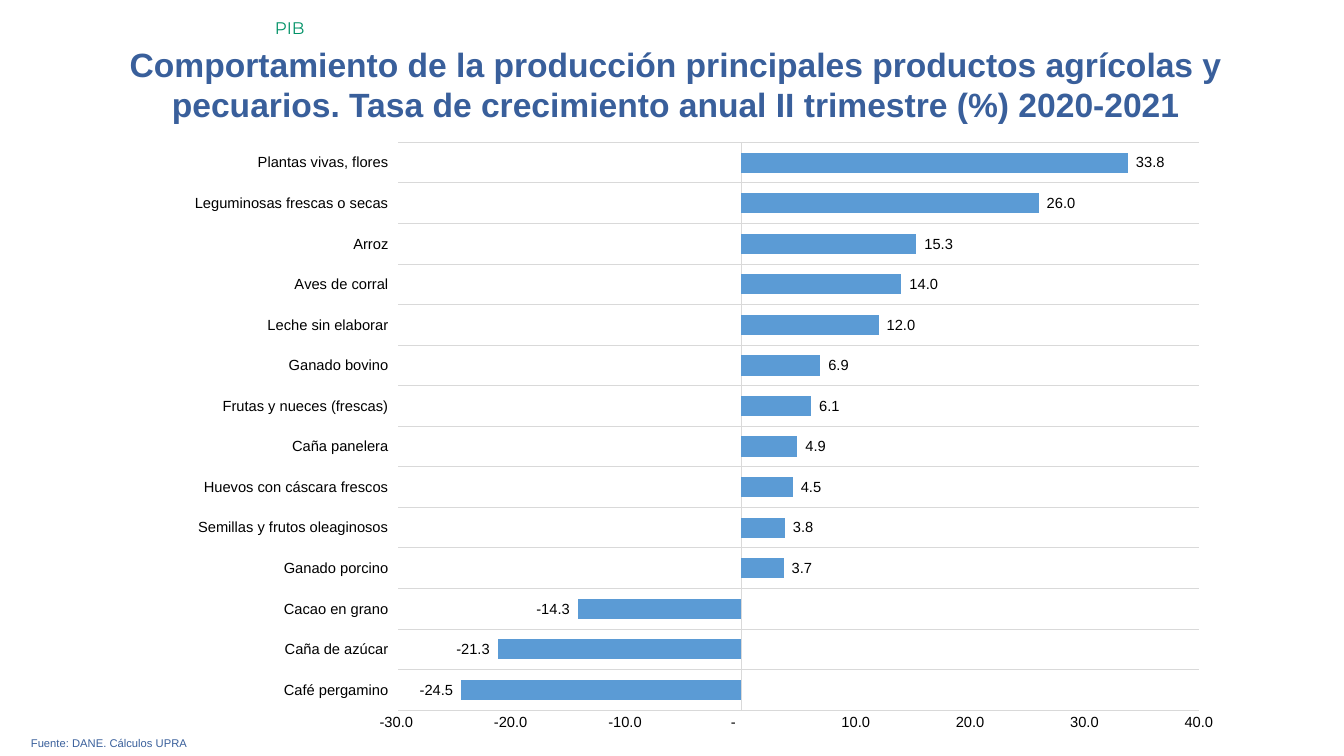
"""Build a slide with a bar chart of annual growth in farm production."""
from lxml import etree
from pptx import Presentation
from pptx.chart.data import CategoryChartData
from pptx.dml.color import RGBColor
from pptx.enum.chart import XL_CHART_TYPE, XL_LABEL_POSITION, XL_TICK_LABEL_POSITION, XL_TICK_MARK
from pptx.enum.text import PP_ALIGN
from pptx.oxml.ns import qn
from pptx.util import Cm, Pt

BAR_CLUSTERED = XL_CHART_TYPE.BAR_CLUSTERED
OUTSIDE_END = XL_LABEL_POSITION.OUTSIDE_END
LOW = XL_TICK_LABEL_POSITION.LOW
NO_TICK = XL_TICK_MARK.NONE
LEFT, CENTER, JUSTIFY = PP_ALIGN.LEFT, PP_ALIGN.CENTER, PP_ALIGN.JUSTIFY

COLORS = {"title": "395F9B", "section": "009267", "bar": "5B9BD5", "grid": "D9D9D9", "text": "000000"}
NUMBER_FORMAT = '_-* #,##0.0_-;\\-* #,##0.0_-;_-* "-"??_-;'
GROWTH = {
    "Café pergamino": -24.5,
    "Caña de azúcar": -21.3,
    "Cacao en grano": -14.3,
    "Ganado porcino": 3.7,
    "Semillas y frutos oleaginosos": 3.8,
    "Huevos con cáscara frescos": 4.5,
    "Caña panelera": 4.9,
    "Frutas y nueces (frescas)": 6.1,
    "Ganado bovino": 6.9,
    "Leche sin elaborar": 12,
    "Aves de corral": 14,
    "Arroz": 15.3,
    "Leguminosas frescas o secas": 26,
    "Plantas vivas, flores": 33.8,
}
TEXTS = [
    ("Comportamiento de la producción principales productos agrícolas y pecuarios. "
     "Tasa de crecimiento anual II trimestre (%) 2020-2021",
     (1.14, 0.97, 31.78, 2.31), 24, "Arial", "title", True, CENTER),
    ("Fuente: DANE. Cálculos UPRA", (0.53, 18.42, 32.79, 0.61), 8, "Arial", "title", False, JUSTIFY),
    ("PIB", (6.68, 0.33, 27.18, 0.76), 12, "Montserrat", "section", False, LEFT),
]


def style_font(font, size, name, color, bold=False):
    font.size = Pt(size)
    font.name = name
    font.bold = bold
    font.color.rgb = RGBColor.from_string(COLORS[color])


presentation = Presentation()
presentation.slide_width = Cm(33.87)
presentation.slide_height = Cm(19.05)
slide = presentation.slides.add_slide(presentation.slide_layouts[6])

for text, box, size, font_name, color, bold, alignment in TEXTS:
    shape = slide.shapes.add_textbox(*[Cm(length) for length in box])
    shape.text_frame.word_wrap = True
    shape.text_frame.text = text
    paragraph = shape.text_frame.paragraphs[0]
    paragraph.alignment = alignment
    style_font(paragraph.runs[0].font, size, font_name, color, bold)

chart_data = CategoryChartData()
chart_data.categories = list(GROWTH)
chart_data.add_series("Tasa de crecimiento", list(GROWTH.values()))
chart = slide.shapes.add_chart(
    BAR_CLUSTERED, Cm(4.39), Cm(3.28), Cm(26.9), Cm(15.47), chart_data).chart
chart.has_legend = False
chart.has_title = False
style_font(chart.font, 10.5, "Arial", "text")

category_axis = chart.category_axis
category_axis.tick_label_position = LOW
category_axis.has_major_gridlines = True
for line in (category_axis.format.line, category_axis.major_gridlines.format.line):
    line.color.rgb = RGBColor.from_string(COLORS["grid"])
    line.width = Pt(0.75)

value_axis = chart.value_axis
value_axis.has_major_gridlines = False
value_axis.minimum_scale, value_axis.maximum_scale, value_axis.major_unit = -30, 40, 10
value_axis.format.line.fill.background()
value_axis.tick_labels.number_format = NUMBER_FORMAT
value_axis.tick_labels.number_format_is_linked = False

for axis in (category_axis, value_axis):
    axis.major_tick_mark = NO_TICK
    axis.minor_tick_mark = NO_TICK
    style_font(axis.tick_labels.font, 10.5, "Arial", "text")

plot = chart.plots[0]
plot.gap_width = 100
plot.vary_by_categories = False
series = plot.series[0]
series.invert_if_negative = False
series.format.fill.solid()
series.format.fill.fore_color.rgb = RGBColor.from_string(COLORS["bar"])
labels = series.data_labels
labels.show_value = True
labels.position = OUTSIDE_END
labels.number_format = NUMBER_FORMAT
labels.number_format_is_linked = False
style_font(labels.font, 10.5, "Arial", "text")

plot_area = chart.element.find(".//" + qn("c:plotArea"))
layout = plot_area.find(qn("c:layout"))
if layout is None:
    layout = etree.Element(qn("c:layout"))
    plot_area.insert(0, layout)
manual_layout = etree.SubElement(layout, qn("c:manualLayout"))
for tag, value in (("layoutTarget", "inner"), ("xMode", "edge"), ("yMode", "edge"),
                   ("x", "0.21"), ("y", "0.02"), ("w", "0.75"), ("h", "0.925")):
    etree.SubElement(manual_layout, qn("c:" + tag)).set("val", value)

presentation.save("out.pptx")
